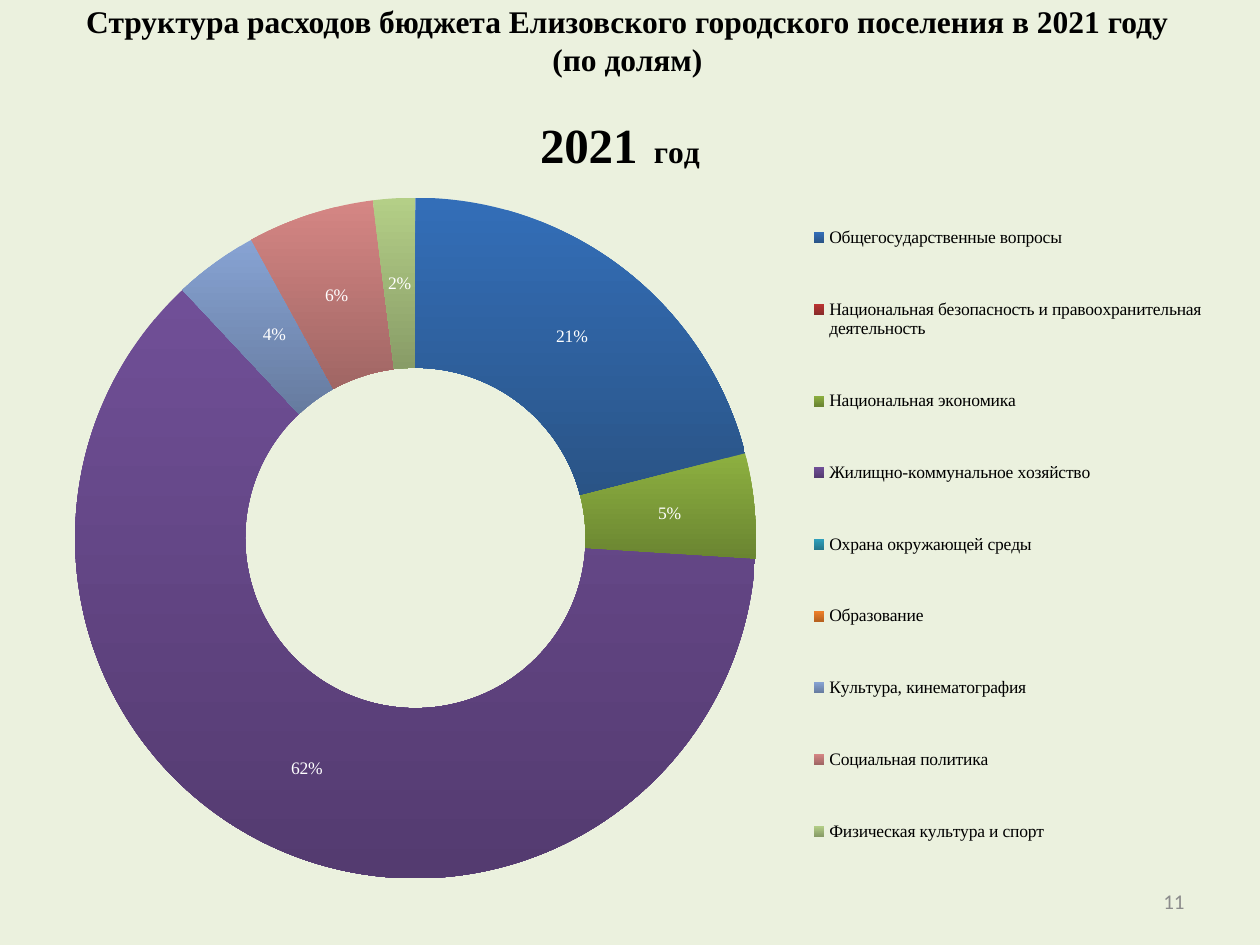
from lxml import etree
from pptx import Presentation
from pptx.chart.data import CategoryChartData
from pptx.dml.color import RGBColor
from pptx.enum.chart import XL_CHART_TYPE, XL_LEGEND_POSITION
from pptx.enum.text import MSO_ANCHOR, PP_ALIGN
from pptx.oxml import parse_xml
from pptx.oxml.ns import qn
from pptx.util import Pt

SERIF = "Times New Roman"
CHART_W, CHART_H = 686, 460


def rgb(value):
    return RGBColor.from_string(value)


def add_text(s, text, x, y, w, h, size, font, color, bold=False, align=PP_ALIGN.CENTER):
    tf = s.shapes.add_textbox(Pt(x), Pt(y), Pt(w), Pt(h)).text_frame
    tf.word_wrap = True
    tf.vertical_anchor = MSO_ANCHOR.MIDDLE
    p = tf.paragraphs[0]
    p.text = text
    p.alignment = align
    for r in p.runs:
        r.font.size, r.font.name, r.font.bold = Pt(size), font, bold
        r.font.color.rgb = rgb(color)


def place(parent, after, edge=True, inner=False, **points):
    """Give a chart part a manual layout, in points within the chart frame."""
    for old in parent.findall(qn("c:layout")):
        parent.remove(old)
    layout = parse_xml(
        '<c:layout xmlns:c="http://schemas.openxmlformats.org/drawingml/2006/chart">'
        "<c:manualLayout/></c:layout>")
    values = {"layoutTarget": "inner"} if inner else {}
    if edge:
        values.update(xMode="edge", yMode="edge")
    for name, value in points.items():
        values[name] = value / (CHART_W if name in "xw" else CHART_H)
    for name, value in values.items():
        etree.SubElement(layout[0], qn("c:" + name)).set("val", str(value))
    if after:
        parent.find(qn(after)).addnext(layout)
    else:
        parent.insert(0, layout)


prs = Presentation()
prs.slide_width, prs.slide_height = Pt(720), Pt(540)
s = prs.slides.add_slide(prs.slide_layouts[6])
s.background.fill.solid()
s.background.fill.fore_color.rgb = rgb("EBF1DE")

# Heading
add_text(s, "Структура расходов бюджета Елизовского городского поселения в 2021 году\v(по долям)",
         22.5, 11.5, 672, 22.5, 18, SERIF, "000000", bold=True)

# Budget shares: category, percent, top and bottom gradient colours
shares = [
    ("Общегосударственные вопросы", 21, "336EB8", "2A5486"),
    ("Национальная безопасность и правоохранительная деятельность", 0, "BB3431", "882B29"),
    ("Национальная экономика", 5, "8DB040", "6A8531"),
    ("Жилищно-коммунальное хозяйство", 62, "704F97", "543B70"),
    ("Охрана окружающей среды", 0, "2FA1BD", "26788C"),
    ("Образование", 0, "F2822B", "B8621F"),
    ("Культура, кинематография", 4, "87A3D3", "667B9F"),
    ("Социальная политика", 6, "D58684", "A06664"),
    ("Физическая культура и спорт", 2, "B4CF87", "889C67"),
]
data = CategoryChartData()
data.categories = [share[0] for share in shares]
data.add_series("2021 год", [share[1] for share in shares])
chart = s.shapes.add_chart(XL_CHART_TYPE.DOUGHNUT, Pt(11.5), Pt(52),
                           Pt(CHART_W), Pt(CHART_H), data).chart
chart.font.size, chart.font.name = Pt(10), SERIF
chart.font.color.rgb = rgb("000000")

# Chart title
chart.has_title = True
tf = chart.chart_title.text_frame
for text, size in (("2021 ", 28), (" ", 10), ("год", 18)):
    r = tf.paragraphs[0].add_run()
    r.text = text
    r.font.size, r.font.name, r.font.bold = Pt(size), SERIF, True
    r.font.color.rgb = rgb("000000")
place(chart.chart_title._element, "c:tx", x=295, y=13.2)

# Legend
chart.has_legend = True
legend = chart.legend
legend.position = XL_LEGEND_POSITION.RIGHT
legend.include_in_layout = False
legend.font.size, legend.font.name = Pt(10), SERIF
place(legend._element, "c:legendPos", x=451, y=48.5, w=226.5, h=410)

# Ring position and hole
area = chart._chartSpace.chart.plotArea
place(area, None, inner=True, x=31.4, y=61, w=389, h=389)
plot = chart.plots[0]
plot.vary_by_categories = True
for hole in area.iter(qn("c:holeSize")):
    hole.set("val", "50")

# Slices
points = plot.series[0].points
for i, (_, _, top, bottom) in enumerate(shares):
    fill = points[i].format.fill
    fill.gradient()
    fill.gradient_angle = 270
    for stop, color in zip(fill.gradient_stops, (top, bottom)):
        stop.color.rgb = rgb(color)
    points[i].format.line.fill.background()

# Percent labels
labels = plot.series[0].data_labels
labels.show_percentage, labels.show_value = True, False
labels.number_format, labels.number_format_is_linked = "0%", False
labels.font.size, labels.font.name = Pt(10), SERIF
labels.font.color.rgb = rgb("FFFFFF")

# Labels of thin slices are moved apart
offsets = {1: (-13, 2), 4: (7.5, 20), 5: (-9, -7), 6: (5, 2)}
for i in offsets:
    font = points[i].data_label.font
    font.size, font.name = Pt(10), SERIF
    font.color.rgb = rgb("FFFFFF")
for label in labels._element.findall(qn("c:dLbl")):
    dx, dy = offsets[int(label.find(qn("c:idx")).get("val"))]
    place(label, "c:idx", edge=False, x=dx, y=dy)
    label.find(qn("c:showVal")).set("val", "0")
    label.find(qn("c:showPercent")).set("val", "1")

# Page number
add_text(s, "11", 516, 500.5, 168, 29, 12, "Calibri", "8C8C8C", align=PP_ALIGN.RIGHT)

prs.save("out.pptx")
